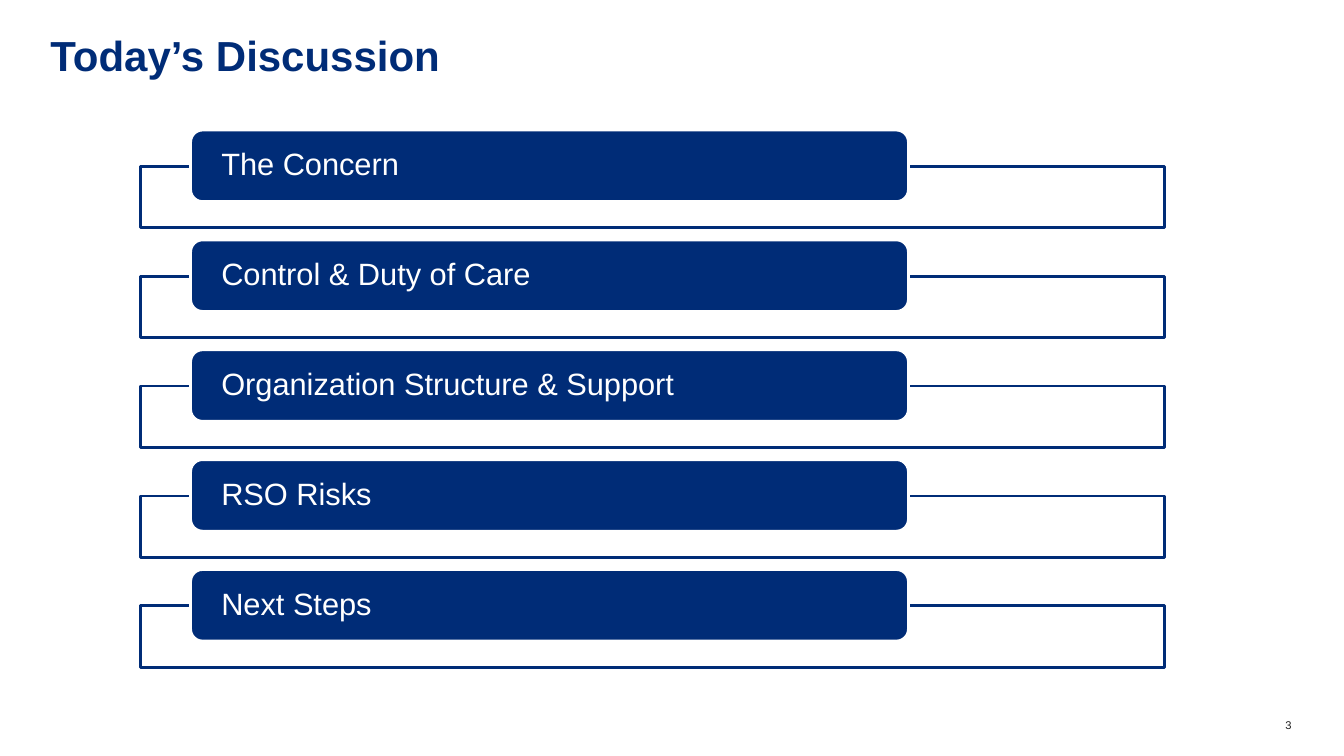
from pptx import Presentation
from pptx.dml.color import RGBColor
from pptx.enum import shapes, text
from pptx.util import Inches, Pt

TITLE = "Today’s Discussion"
TOPICS = [
    "The Concern",
    "Control & Duty of Care",
    "Organization Structure & Support",
    "RSO Risks",
    "Next Steps",
]
PAGE = "3"

COLORS = {"navy": "002C77", "white": "FFFFFF", "dark": "202020"}
FRAME = (1.39, 1.65, 10.16, 0.61)
PILL = (1.89, 1.29, 7.12, 0.71)
PITCH = 1.09
ALIGN = text.PP_ALIGN
ANCHOR = text.MSO_ANCHOR


def color(name):
    return RGBColor.from_string(COLORS[name])


def write(shape, words, size, hue, bold=False, align=ALIGN.LEFT,
          anchor=ANCHOR.TOP, inset=0, spacing=1.0):
    frame = shape.text_frame
    layout = {
        "word_wrap": True, "vertical_anchor": anchor,
        "margin_left": Inches(inset), "margin_right": Inches(inset),
        "margin_top": 0, "margin_bottom": 0,
    }
    for key, value in layout.items():
        setattr(frame, key, value)
    para = frame.paragraphs[0]
    para.text = words
    para.alignment = align
    para.line_spacing = spacing
    style = {"name": "Arial", "size": Pt(size), "bold": bold}
    for key, value in style.items():
        setattr(para.font, key, value)
    para.font.color.rgb = color(hue)


def add_box(slide, kind, place, drop, fill, line):
    """Add a filled shape, moved down by drop inches."""
    left, top, width, height = place
    box = slide.shapes.add_shape(
        kind, *map(Inches, (left, top + drop, width, height)))
    box.shadow.inherit = False
    box.fill.solid()
    box.fill.fore_color.rgb = color(fill)
    box.line.color.rgb = color(line)
    box.line.width = Pt(2)
    return box


def main():
    deck = Presentation()
    deck.slide_width, deck.slide_height = Inches(13.33), Inches(7.5)
    slide = deck.slides.add_slide(deck.slide_layouts[6])

    title = slide.shapes.add_textbox(*map(Inches, (0.5, 0.39, 12.31, 0.54)))
    write(title, TITLE, 30, "navy", bold=True, spacing=0.8)

    kinds = shapes.MSO_SHAPE
    for row, topic in enumerate(TOPICS):
        drop = row * PITCH
        add_box(slide, kinds.RECTANGLE, FRAME, drop, "white", "navy")
        pill = add_box(slide, kinds.ROUNDED_RECTANGLE, PILL, drop,
                       "navy", "white")
        write(pill, topic, 22, "white", anchor=ANCHOR.MIDDLE,
              inset=0.27, spacing=0.9)

    page = slide.shapes.add_textbox(*map(Inches, (12.5, 7.13, 0.31, 0.13)))
    write(page, PAGE, 8, "dark", align=ALIGN.RIGHT)
    deck.save("out.pptx")


if __name__ == "__main__":
    main()
